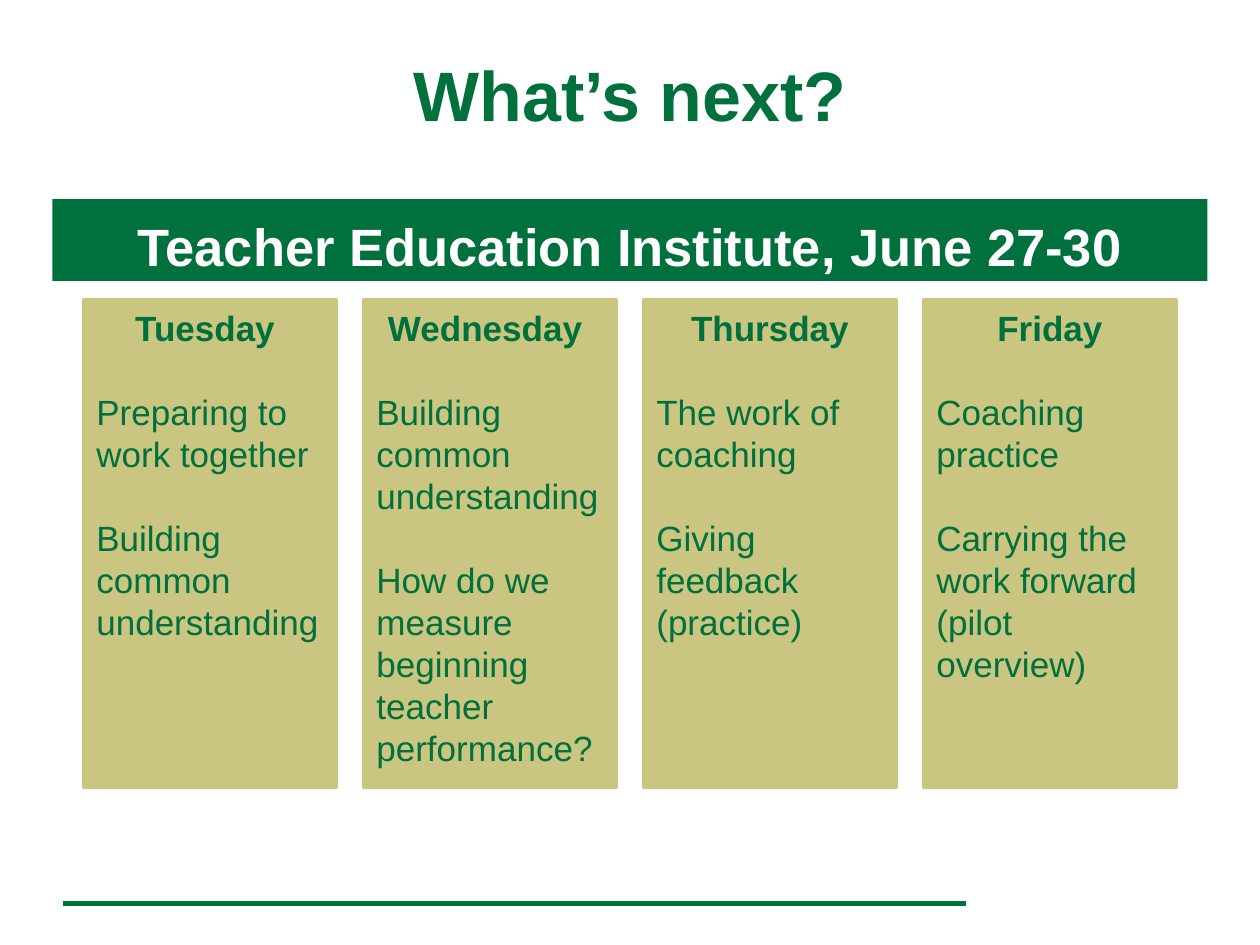
from lxml import etree
from pptx import Presentation, util as u
from pptx.dml.color import RGBColor
from pptx.enum import shapes, text
from pptx.oxml.ns import qn

W, H = 10, 7.5
C = {"green": "00703C", "sand": "CAC580", "white": "FFFFFF"}
DAYS = [
    ("Tuesday ", ["Preparing to work together", "Building common understanding"]),
    ("Wednesday ", ["Building common understanding",
                    "How do we measure beginning teacher performance?"]),
    ("Thursday", ["The work of coaching", "Giving feedback (practice)"]),
    ("Friday", ["Coaching practice", "Carrying the work forward (pilot overview)"]),
]


def rgb(name):
    return RGBColor.from_string(C[name])


def place(sp, box):
    sp.left, sp.top, sp.width, sp.height = [u.Inches(v) for v in box]


def add_text(p, words, size, color, bold=False, align=text.PP_ALIGN.LEFT):
    p.alignment = align
    r = p.add_run()
    r.text = words
    r.font.name, r.font.size, r.font.bold = "Arial", u.Pt(size), bold
    r.font.color.rgb = rgb(color)


def add_box(s, box, fill, anchor):
    sp = s.shapes.add_shape(shapes.MSO_SHAPE.RECTANGLE, *[u.Inches(v) for v in box])
    sp.shadow.inherit = False
    sp.fill.solid()
    sp.fill.fore_color.rgb = rgb(fill)
    sp.line.fill.background()
    sp.text_frame.word_wrap = True
    sp.text_frame.vertical_anchor = anchor
    return sp


def add_title(s, box):
    sp = s.shapes.title
    place(sp, box)
    tf = sp.text_frame
    tf.word_wrap = True
    tf.auto_size = text.MSO_AUTO_SIZE.NONE
    tf.vertical_anchor = text.MSO_ANCHOR.TOP
    tf.margin_top = u.Inches(0.11)
    add_text(tf.paragraphs[0], "What’s next?", 40, "green", True, text.PP_ALIGN.CENTER)


def add_banner(s, box):
    tf = add_box(s, box, "green", text.MSO_ANCHOR.MIDDLE).text_frame
    tf.margin_top = u.Inches(0.13)
    add_text(tf.paragraphs[0], "Teacher Education Institute, June 27-30", 30,
             "white", True, text.PP_ALIGN.CENTER)


def add_day(s, box, day, topics):
    sp = add_box(s, box, "sand", text.MSO_ANCHOR.TOP)
    sp.line.color.rgb = rgb("sand")
    sp.line.width = u.Pt(2)
    tf = sp.text_frame
    p = tf.paragraphs[0]
    p.line_spacing = u.Pt(24)
    add_text(p, day, 20, "green", True, text.PP_ALIGN.CENTER)
    for topic in topics:
        p = tf.add_paragraph()
        p.line_spacing = p.space_before = u.Pt(24)  # one line of gap
        add_text(p, topic, 20, "green")


def add_schedule(s, box, col_w):
    left, top, width, height = box
    step = (width - col_w) / (len(DAYS) - 1)
    for i, (day, topics) in enumerate(DAYS):
        add_day(s, (left + i * step, top, col_w, height), day, topics)


def add_footer_rule(s, x1, x2, y):
    ln = s.shapes.add_connector(shapes.MSO_CONNECTOR.STRAIGHT, u.Inches(x1),
                                u.Inches(y), u.Inches(x2), u.Inches(y))
    ln.line.color.rgb = rgb("green")
    ln.line.width = u.Pt(2.5)
    etree.SubElement(ln._element.spPr, qn("a:effectLst"))


def main():
    prs = Presentation()
    prs.slide_width, prs.slide_height = u.Inches(W), u.Inches(H)
    s = prs.slides.add_slide(prs.slide_layouts[5])
    add_footer_rule(s, 0.05 * W, 0.767 * W, 0.956 * H)
    add_title(s, (0, 0.04 * H, W, H / 6))
    # Day columns between equal side margins
    margin = W / 15
    add_schedule(s, (margin, 2.38, W - 2 * margin, 3.87), W / 5)
    add_banner(s, (W / 24, 1.58, W * 11 / 12, 0.65))
    prs.save("out.pptx")


if __name__ == "__main__":
    main()
